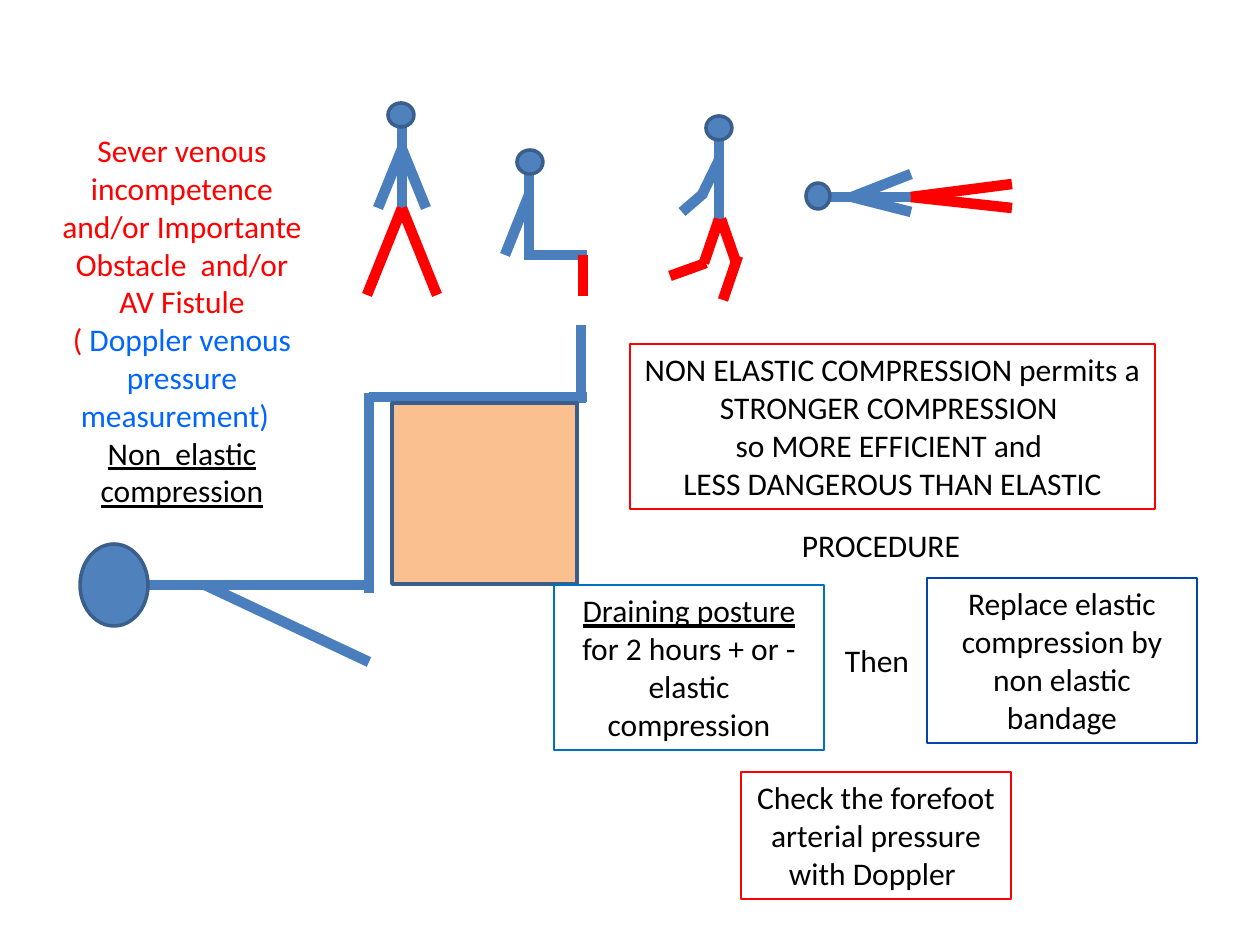
"""Build the slide on non elastic compression and draining posture."""
from pptx import Presentation
from pptx import util as u
from pptx.dml.color import RGBColor
from pptx.enum import shapes, text
from pptx.oxml import parse_xml

SCALE = 914400 / 126
BLUE, OUTLINE, RED, BLACK = "4B7EBC", "3A5F8C", "FF0000", "000000"
LINK_BLUE, BODY_BLUE = "0066FF", "4F81BD"
EFFECTS = '<a:effectLst xmlns:a="http://schemas.openxmlformats.org/drawingml/2006/main"/>'

# Each figure: head (left, top, width, height, rotation), blue limbs, red limbs.
STANDING = dict(
    head=(388, 103, 26, 24, 0),
    blue=[(402, 127, 402, 208), (402, 149, 378, 208), (402, 149, 426, 208)],
    red=[(402, 208, 367, 295), (402, 208, 437, 295)])
SEATED = dict(
    head=(517, 150, 26, 24, 0),
    blue=[(529, 174, 529, 255), (524, 255, 587, 255), (529, 195, 505, 255)],
    red=[(583, 255, 583, 296)])
WALKING = dict(
    head=(706, 116, 26, 24, 0),
    blue=[(719, 140, 719, 219), (719, 160, 702, 195), (682, 212, 704, 193)],
    red=[(719, 219, 704, 263), (670, 276, 706, 263),
         (721, 219, 736, 262), (738, 256, 723, 300)])
LYING = dict(
    head=(805, 184, 26, 24, 270),
    blue=[(830, 197, 911, 197), (852, 197, 911, 212), (852, 197, 911, 174)],
    red=[(911, 197, 1012, 208), (911, 197, 1012, 184)])
DRAINING = dict(
    head=(73, 551, 82, 68, 270),
    blue=[(147, 585, 369, 585), (369, 397, 587, 397), (369, 593, 369, 393),
          (205, 585, 369, 662), (581, 403, 581, 325)],
    red=[])


def px(*lengths):
    """Turn pixel lengths into EMU."""
    return [u.Emu(round(length * SCALE)) for length in lengths]


def colour(value):
    """Turn a hex string into a colour."""
    return RGBColor.from_string(value)


def add_limb(canvas, ends, hue):
    """Draw one thick straight limb."""
    limb = canvas.add_connector(shapes.MSO_CONNECTOR.STRAIGHT, *px(*ends))
    limb.line.color.rgb = colour(hue)
    limb.line.width = u.Pt(6)
    limb._element.spPr.append(parse_xml(EFFECTS))


def add_solid(canvas, kind, place, fill, rotation=0):
    """Draw a filled, outlined preset shape."""
    shape = canvas.add_shape(kind, *px(*place))
    shape.shadow.inherit = False
    shape.rotation = rotation
    shape.fill.solid()
    shape.fill.fore_color.rgb = colour(fill)
    shape.line.color.rgb = colour(OUTLINE)
    shape.line.width = u.Pt(2)


def add_figure(canvas, head, blue, red):
    """Draw a stick figure with its head and coloured limbs."""
    for hue, limbs in ((BLUE, blue), (RED, red)):
        for ends in limbs:
            add_limb(canvas, ends, hue)
    add_solid(canvas, shapes.MSO_SHAPE.OVAL, head[:4], BODY_BLUE, head[4])


def add_text(canvas, place, paras, border=None):
    """Add centred text; each paragraph is a list of (words, format) spans."""
    box = canvas.add_textbox(*px(*place))
    if border:
        box.line.color.rgb = colour(border)
        box.line.width = u.Pt(0.75)
    frame = box.text_frame
    frame.word_wrap = True
    for index, spans in enumerate(paras):
        para = frame.add_paragraph() if index else frame.paragraphs[0]
        para.alignment = text.PP_ALIGN.CENTER
        for words, changes in spans:
            span = para.add_run()
            span.text = words
            style = {"name": "Calibri", "size": u.Pt(18), **changes}
            span.font.color.rgb = colour(style.pop("hue", BLACK))
            for name, value in style.items():
                setattr(span.font, name, value)


def main():
    """Compose and save the slide."""
    deck = Presentation()
    deck.slide_width, deck.slide_height = px(1260, 945)
    canvas = deck.slides.add_slide(deck.slide_layouts[6]).shapes
    underline = {"underline": True}

    add_text(canvas, (47, 125, 270, 432), [
        [("Sever venous incompetence and/or Importante Obstacle  and/or AV Fistule ( ",
          {"hue": RED}),
         ("Doppler venous pressure measurement)  ", {"hue": LINK_BLUE})],
        [("Non  elastic compression", underline)]])

    add_figure(canvas, **STANDING)
    add_figure(canvas.add_group_shape().shapes, **SEATED)
    for figure in (WALKING, LYING, DRAINING):
        add_figure(canvas, **figure)
    add_solid(canvas, shapes.MSO_SHAPE.RECTANGLE, (392, 403, 185, 181), "FAC090")

    add_text(canvas, (554, 585, 270, 165), [
        [("Draining posture ", underline),
         ("for 2 hours + or - elastic compression", {})]], "0070C0")
    add_text(canvas, (927, 578, 270, 165), [
        [("Replace elastic compression by non elastic bandage", {})]], "0046AC")
    add_text(canvas, (741, 772, 270, 127), [
        [("Check the forefoot arterial pressure with Doppler ", {})]], RED)
    add_text(canvas, (630, 344, 525, 165), [
        [("NON ELASTIC COMPRESSION permits a STRONGER COMPRESSION ", {})],
        [("so MORE EFFICIENT and ", {})],
        [("LESS DANGEROUS THAN ELASTIC", {})]], RED)
    add_text(canvas, (746, 520, 270, 89), [[("PROCEDURE", {})]])
    add_text(canvas, (742, 635, 270, 50), [[("Then", {})]])
    deck.save("out.pptx")


if __name__ == "__main__":
    main()
